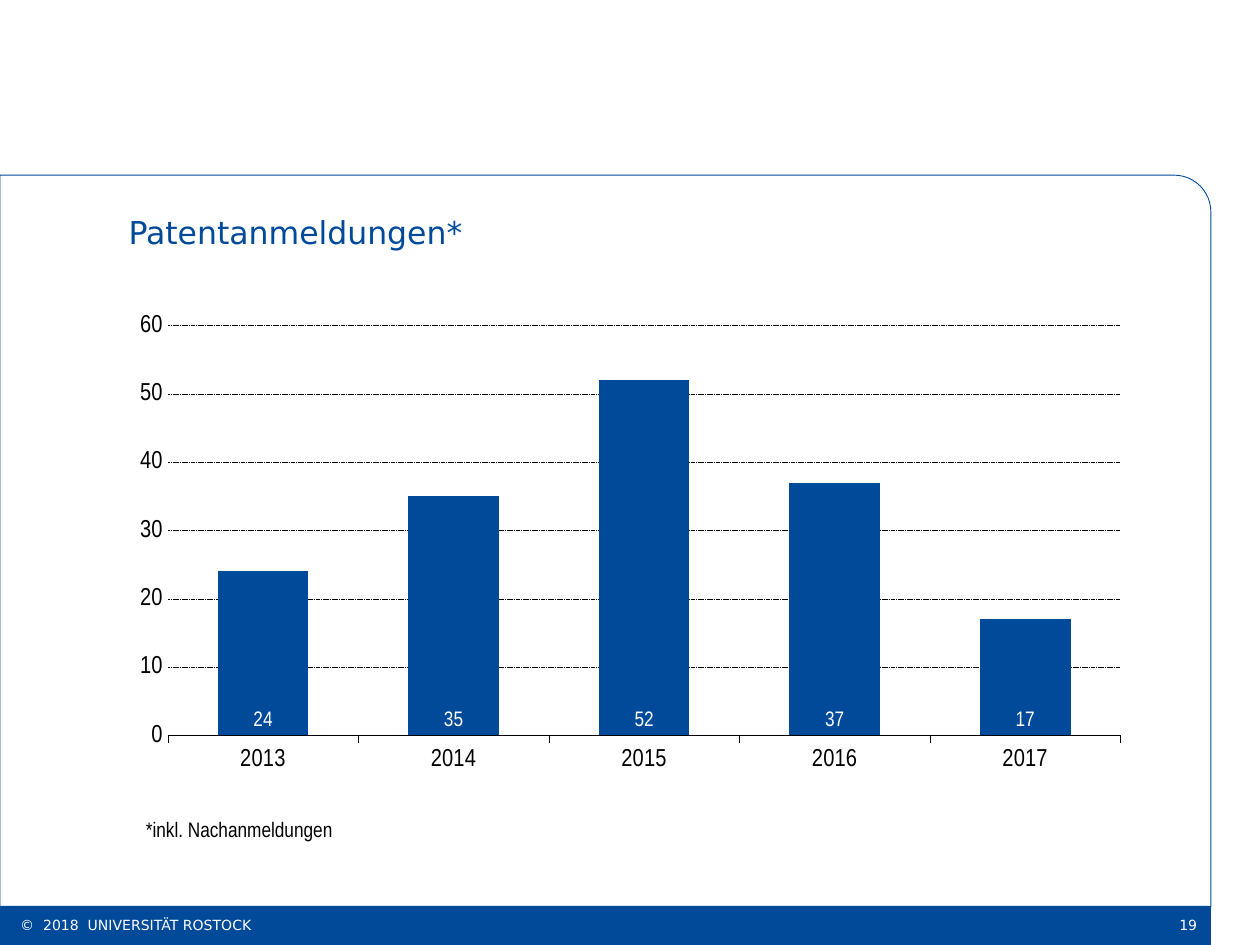
from lxml.etree import SubElement
from pptx import Presentation
from pptx.chart.data import CategoryChartData
from pptx.dml.color import RGBColor
from pptx.enum.chart import XL_CHART_TYPE, XL_LABEL_POSITION, XL_TICK_MARK
from pptx.enum.dml import MSO_LINE
from pptx.enum.shapes import MSO_SHAPE
from pptx.enum.text import MSO_ANCHOR, PP_ALIGN
from pptx.oxml import parse_xml
from pptx.oxml.ns import nsdecls, qn
from pptx.util import Emu, Pt

BLUE, BLACK, WHITE = "004A99", "000000", "FFFFFF"
HEADING_FONT, CHART_FONT = "DejaVu Sans", "Arial Narrow"
PANEL_WIDTH = 961


def px(length):
    return Emu(length * 9144)


def color(value):
    return RGBColor.from_string(value)


def style_font(font, name, size, value):
    font.name = name
    font.size = Pt(size)
    font.color.rgb = color(value)


def style_line(line, value, width):
    line.color.rgb = color(value)
    line.width = Pt(width)


def add_text(slide, box, text, name, size, value, align=PP_ALIGN.LEFT,
             anchor=MSO_ANCHOR.MIDDLE, inset=0):
    shape = slide.shapes.add_textbox(*map(px, box))
    text_frame = shape.text_frame
    text_frame.word_wrap = True
    text_frame.vertical_anchor = anchor
    text_frame.margin_left = px(inset)
    text_frame.text = text
    paragraph = text_frame.paragraphs[0]
    paragraph.alignment = align
    style_font(paragraph.runs[0].font, name, size, value)


def add_panel(slide, box):
    shape = slide.shapes.add_shape(MSO_SHAPE.ROUND_1_RECTANGLE, *map(px, box))
    shape.adjustments[0] = 0.05
    shape.shadow.inherit = False
    shape.fill.background()
    style_line(shape.line, BLUE, 0.5)


def add_footer(slide, box, copyright_line, number):
    left, top, width, height = box
    bar = slide.shapes.add_shape(MSO_SHAPE.RECTANGLE, *map(px, box))
    bar.shadow.inherit = False
    bar.fill.solid()
    bar.fill.fore_color.rgb = color(BLUE)
    bar.line.fill.background()
    add_text(slide, (left + 16, top - 1, 848, height + 1), copyright_line,
             HEADING_FONT, 8, WHITE)
    add_text(slide, (left + width - 78, top - 1, 77, height + 1), number,
             HEADING_FONT, 8, WHITE, PP_ALIGN.RIGHT)


def set_plot_area(chart, x, y, width, height):
    plot_area = chart.element.find(".//" + qn("c:plotArea"))
    for layout in plot_area.findall(qn("c:layout")):
        plot_area.remove(layout)
    layout = parse_xml(f"<c:layout {nsdecls('c')}/>")
    manual = SubElement(layout, qn("c:manualLayout"))
    settings = {"layoutTarget": "inner", "xMode": "edge", "yMode": "edge",
                "x": x, "y": y, "w": width, "h": height}
    for tag, value in settings.items():
        SubElement(manual, qn(f"c:{tag}")).set("val", str(value))
    plot_area.insert(0, layout)


def style_axes(chart):
    category_axis, value_axis = chart.category_axis, chart.value_axis
    for axis in (category_axis, value_axis):
        style_font(axis.tick_labels.font, CHART_FONT, 14, BLACK)
        axis.minor_tick_mark = XL_TICK_MARK.NONE
    category_axis.major_tick_mark = XL_TICK_MARK.OUTSIDE
    style_line(category_axis.format.line, BLACK, 0.25)
    value_axis.major_tick_mark = XL_TICK_MARK.NONE
    value_axis.format.line.fill.background()
    value_axis.minimum_scale = 0
    value_axis.maximum_scale = 60
    value_axis.major_unit = 10
    value_axis.has_major_gridlines = True
    gridline = value_axis.major_gridlines.format.line
    style_line(gridline, BLACK, 0.25)
    gridline.dash_style = MSO_LINE.SQUARE_DOT


def add_patent_chart(slide, box, patents):
    data = CategoryChartData()
    data.categories = list(patents)
    data.add_series("Series 1", list(patents.values()))
    chart = slide.shapes.add_chart(
        XL_CHART_TYPE.COLUMN_CLUSTERED, *map(px, box), data).chart
    chart.has_legend = False
    chart.has_title = False
    style_font(chart.font, CHART_FONT, 14, BLACK)
    set_plot_area(chart, 0.07, 0.09, 0.91, 0.78)
    style_axes(chart)

    plot = chart.plots[0]
    plot.gap_width = 110
    plot.overlap = 100
    plot.vary_by_categories = False
    series = plot.series[0]
    series.format.fill.solid()
    series.format.fill.fore_color.rgb = color(BLUE)
    labels = series.data_labels
    labels.show_value = True
    labels.position = XL_LABEL_POSITION.INSIDE_BASE
    style_font(labels.font, CHART_FONT, 12, WHITE)


def main():
    presentation = Presentation()
    presentation.slide_width = px(1000)
    presentation.slide_height = px(750)
    slide = presentation.slides.add_slide(presentation.slide_layouts[6])
    add_panel(slide, (0, 139, PANEL_WIDTH, 581))
    add_footer(slide, (0, 719, PANEL_WIDTH, 31),
               "©  2018  UNIVERSITÄT ROSTOCK", "19")
    add_text(slide, (102, 147, 829, 74), "Patentanmeldungen*",
             HEADING_FONT, 18, BLUE)
    add_patent_chart(slide, (75, 221, 831, 417),
                     {"2013": 24, "2014": 35, "2015": 52, "2016": 37, "2017": 17})
    add_text(slide, (106, 643, 213, 30), "*inkl. Nachanmeldungen",
             CHART_FONT, 12, BLACK, anchor=MSO_ANCHOR.TOP, inset=10)
    presentation.save("out.pptx")


if __name__ == "__main__":
    main()
